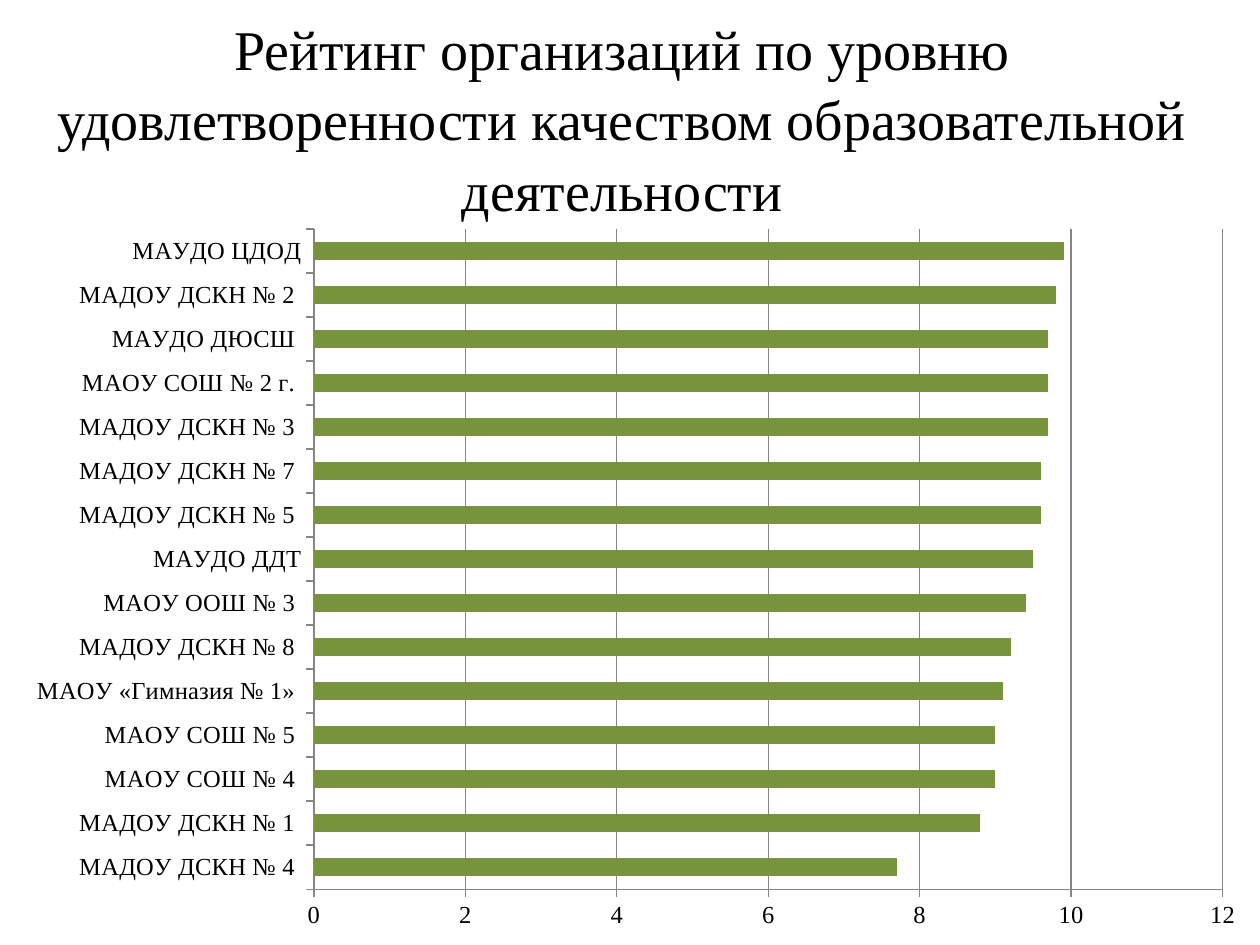
from lxml import etree
from pptx import Presentation, util as u
from pptx.chart.data import CategoryChartData
from pptx.dml.color import RGBColor
from pptx.enum import chart as ch, text
from pptx.oxml.ns import qn

FONT = "Times New Roman"
GREY = "868686"


def rgb(value):
    return RGBColor.from_string(value)


def style_font(font, size, color="000000"):
    font.name, font.size, font.bold = FONT, u.Pt(size), False
    font.color.rgb = rgb(color)


prs = Presentation()
prs.slide_width, prs.slide_height = u.Inches(10), u.Inches(7.5)
W, H = prs.slide_width, prs.slide_height
s = prs.slides.add_slide(prs.slide_layouts[5])

# Title
title = s.shapes.title
title.left, title.top = 0, int(H * 0.04)
title.width, title.height = int(W * 0.988), int(H * 0.167)
tf = title.text_frame
tf.word_wrap = True
tf.auto_size = text.MSO_AUTO_SIZE.NONE
tf.vertical_anchor = text.MSO_ANCHOR.MIDDLE
p = tf.paragraphs[0]
p.alignment = text.PP_ALIGN.CENTER
p.line_spacing = 1.05
r = p.add_run()
r.text = "Рейтинг организаций по уровню удовлетворенности качеством образовательной деятельности"
style_font(r.font, 32)

# Ratings, from the bottom bar to the top one
ratings = [
    ("МАДОУ ДСКН № 4 ", 7.7),
    ("МАДОУ ДСКН № 1 ", 8.8),
    ("МАОУ СОШ № 4 ", 9),
    ("МАОУ СОШ № 5 ", 9),
    ("МАОУ «Гимназия № 1» ", 9.1),
    ("МАДОУ ДСКН № 8 ", 9.2),
    ("МАОУ ООШ № 3 ", 9.4),
    ("МАУДО ДДТ", 9.5),
    ("МАДОУ ДСКН № 5 ", 9.6),
    ("МАДОУ ДСКН № 7 ", 9.6),
    ("МАДОУ ДСКН № 3 ", 9.7),
    ("МАОУ СОШ № 2 г. ", 9.7),
    ("МАУДО ДЮСШ ", 9.7),
    ("МАДОУ ДСКН № 2 ", 9.8),
    ("МАУДО ЦДОД", 9.9),
]
data = CategoryChartData()
data.categories = [name for name, _ in ratings]
data.add_series("Series 1", [value for _, value in ratings])

# Bar chart
chart = s.shapes.add_chart(
    ch.XL_CHART_TYPE.BAR_CLUSTERED, int(W * 0.012), int(H * 0.227),
    int(W * 0.988), int(H * 0.772), data).chart
chart.has_legend = chart.has_title = False
style_font(chart.font, 14)
plot = chart.plots[0]
plot.gap_width = 150
plot.vary_by_categories = False
fill = plot.series[0].format.fill
fill.solid()
fill.fore_color.rgb = rgb("77933C")

# Axes
value_axis = chart.value_axis
value_axis.minimum_scale, value_axis.maximum_scale, value_axis.major_unit = 0, 12, 2
value_axis.has_major_gridlines = True
for axis in (chart.category_axis, value_axis):
    axis.major_tick_mark = ch.XL_TICK_MARK.OUTSIDE
    axis.minor_tick_mark = ch.XL_TICK_MARK.NONE
for part in (chart.category_axis, value_axis, value_axis.major_gridlines):
    part.format.line.color.rgb = rgb(GREY)
    part.format.line.width = u.Pt(0.75)

# Plot area as shares of the chart
area = chart._chartSpace.chart.plotArea
for old in area.findall(qn("c:layout")):
    area.remove(old)
layout = etree.Element(qn("c:layout"))
area.insert(0, layout)
manual = etree.SubElement(layout, qn("c:manualLayout"))
for tag, val in (("layoutTarget", "inner"), ("xMode", "edge"), ("yMode", "edge"),
                 ("x", 0.24), ("y", 0.02), ("w", 0.73), ("h", 0.905)):
    etree.SubElement(manual, qn("c:" + tag)).set("val", str(val))

prs.save("out.pptx")
